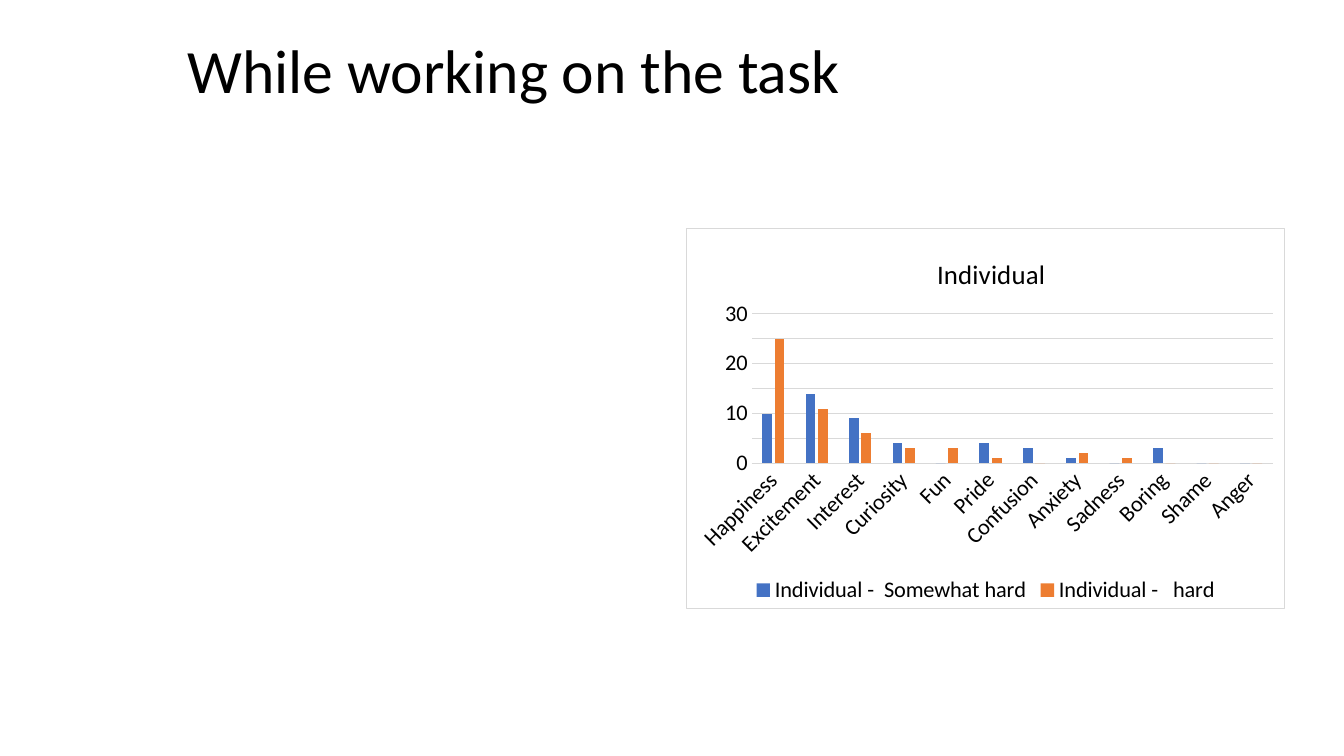
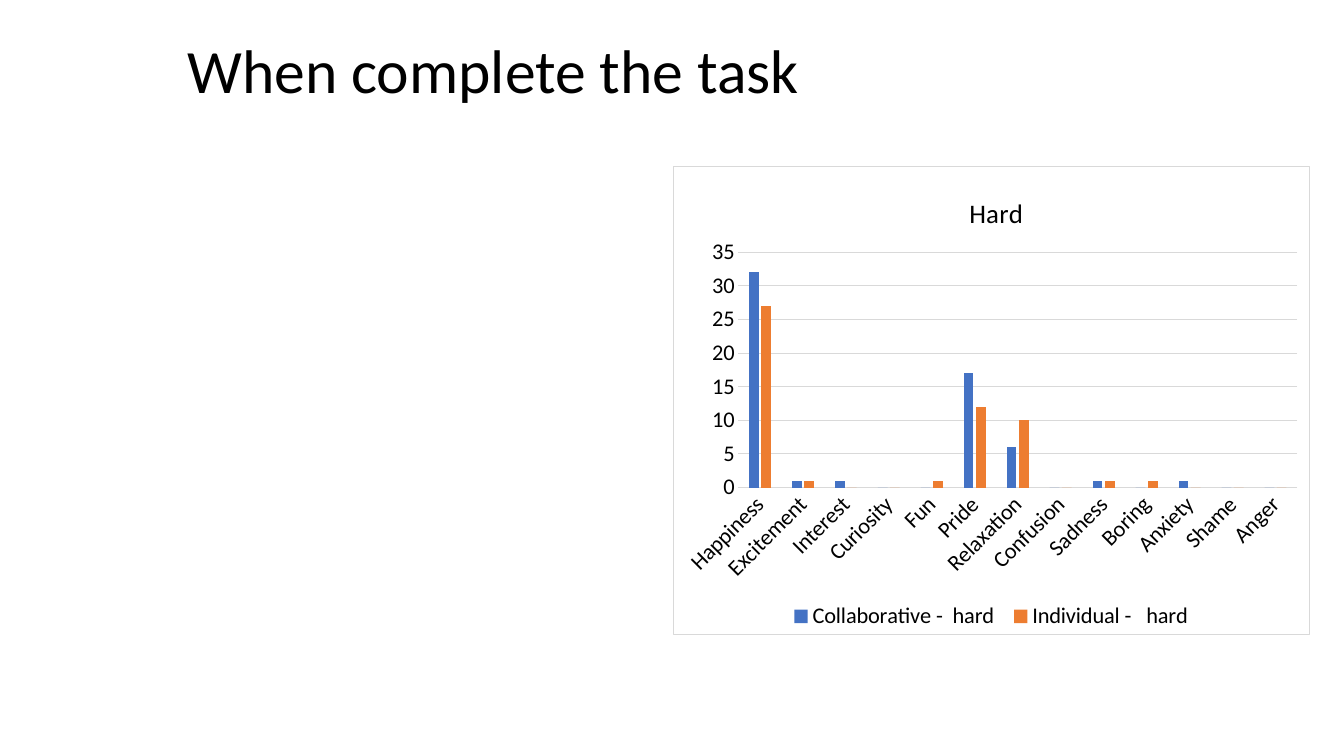
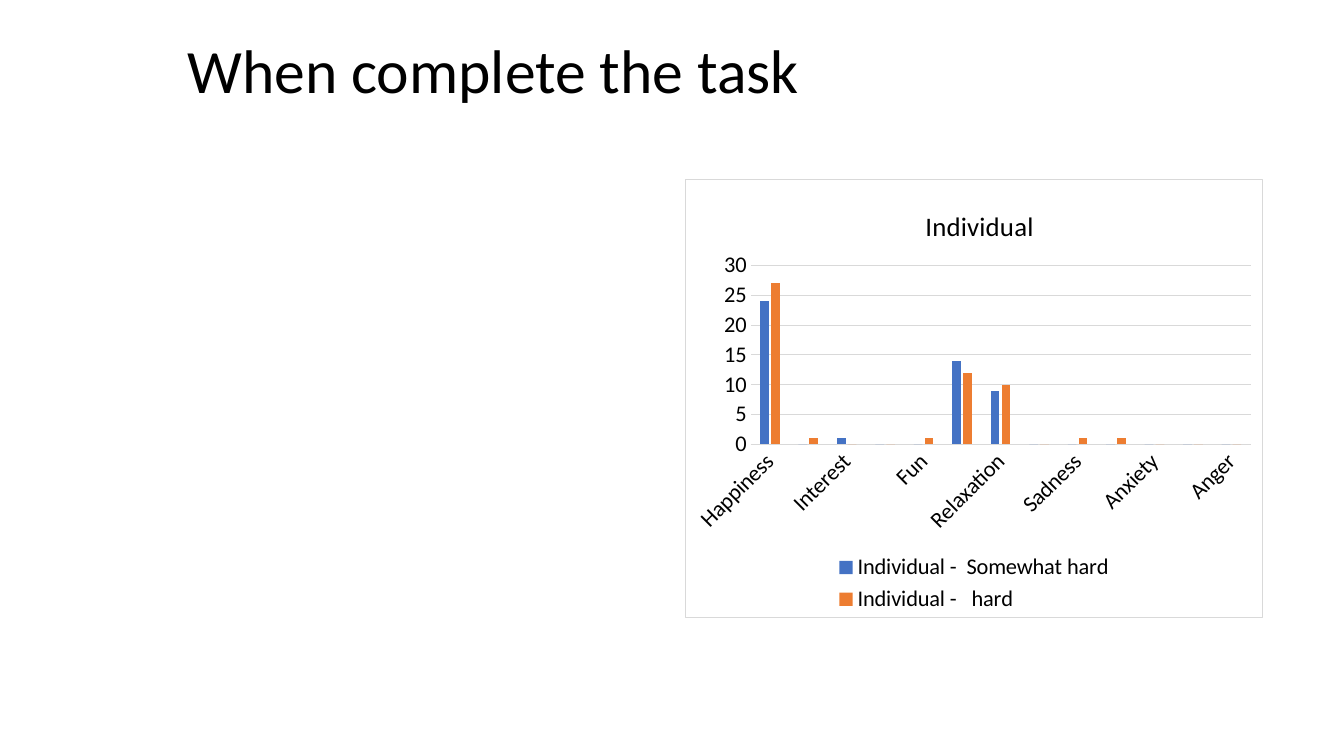
from lxml import etree
from pptx import Presentation
from pptx.chart.data import CategoryChartData
from pptx.dml.color import RGBColor
from pptx.enum import chart as ch, text
from pptx.oxml import parse_xml
from pptx.oxml.ns import nsdecls, qn
from pptx.util import Inches, Pt

BLACK = RGBColor(0x00, 0x00, 0x00)
GRID = RGBColor(0xD9, 0xD9, 0xD9)
BLUE = RGBColor(0x44, 0x72, 0xC4)
ORANGE = RGBColor(0xED, 0x7D, 0x31)
FONT = "Calibri"

# Distances in inches from the chart frame
PLOT_LEFT, PLOT_TOP, PLOT_RIGHT = 0.65, 0.85, 0.12
TITLE_TOP = 0.22

WORKING_EMOTIONS = ["Happiness", "Excitement", "Interest", "Curiosity", "Fun", "Pride",
                    "Confusion", "Anxiety", "Sadness", "Boring", "Shame", "Anger"]
COMPLETE_EMOTIONS = ["Happiness", "Excitement", "Interest", "Curiosity", "Fun", "Pride",
                     "Relaxation", "Confusion", "Sadness", "Boring", "Anxiety", "Shame",
                     "Anger"]
SOMEWHAT_HARD = "Individual -  Somewhat hard"
HARD = "Individual -   hard"
COLLABORATIVE_HARD = "Collaborative -  hard "
COMPLETE_HARD_VALUES = [27, 1, 0, 0, 1, 12, 10, 0, 1, 1, 0, 0, 0]


def set_font(font, size):
    font.name = FONT
    font.size = Pt(size)
    font.color.rgb = BLACK


def set_line(line):
    line.color.rgb = GRID
    line.width = Pt(0.75)


def add_title_slide(prs, title):
    s = prs.slides.add_slide(prs.slide_layouts[6])
    tf = s.shapes.add_textbox(Inches(1.76), 0, Inches(11.5), Inches(1.45)).text_frame
    tf.word_wrap = True
    tf.vertical_anchor = text.MSO_ANCHOR.MIDDLE
    p = tf.paragraphs[0]
    p.text = title
    p.line_spacing = 0.9
    set_font(p.runs[0].font, 44)
    return s


def set_layout(parent, index, **values):
    """Place a chart part by hand; values are fractions of the chart."""
    for old in parent.findall(qn("c:layout")):
        parent.remove(old)
    layout = parse_xml(f"<c:layout {nsdecls('c')}><c:manualLayout/></c:layout>")
    for tag, value in values.items():
        val = value if isinstance(value, str) else f"{value:.4f}"
        etree.SubElement(layout[0], qn(f"c:{tag}")).set("val", val)
    parent.insert(index, layout)


def set_frame(chart):
    """Give the chart area a white fill and a thin border."""
    chart._chartSpace.find(qn("c:chart")).addnext(parse_xml(
        f'<c:spPr {nsdecls("c", "a")}>'
        '<a:solidFill><a:srgbClr val="FFFFFF"/></a:solidFill>'
        f'<a:ln w="{Pt(0.75)}"><a:solidFill><a:srgbClr val="{GRID}"/></a:solidFill></a:ln>'
        '</c:spPr>'))


def style_axes(chart, maximum):
    cat, val = chart.category_axis, chart.value_axis
    for axis in (cat, val):
        axis.major_tick_mark = axis.minor_tick_mark = ch.XL_TICK_MARK.NONE
        set_font(axis.tick_labels.font, 16)
    set_line(cat.format.line)
    # Automatic rotation of the category labels
    cat._element.find(qn("c:txPr")).find(qn("a:bodyPr")).set("rot", "-60000000")
    val.format.line.fill.background()
    val.has_major_gridlines = True
    set_line(val.major_gridlines.format.line)
    val.minimum_scale, val.maximum_scale, val.major_unit = 0, maximum, 5


def add_emotion_chart(s, box, title, title_width, emotions, series, maximum, plot_bottom):
    data = CategoryChartData()
    data.categories = emotions
    for name, values in series:
        data.add_series(name, values)
    chart = s.shapes.add_chart(ch.XL_CHART_TYPE.COLUMN_CLUSTERED,
                               *map(Inches, box), data).chart
    set_font(chart.font, 16)
    set_frame(chart)

    plot = chart.plots[0]
    plot.vary_by_categories = False
    plot.gap_width, plot.overlap = 219, -27
    for ser, color in zip(plot.series, (BLUE, ORANGE)):
        ser.format.fill.solid()
        ser.format.fill.fore_color.rgb = color

    chart.has_title = True
    p = chart.chart_title.text_frame.paragraphs[0]
    p.text = title
    set_font(p.runs[0].font, 19.2)
    p.runs[0].font.bold = False

    chart.has_legend = True
    chart.legend.position = ch.XL_LEGEND_POSITION.BOTTOM
    chart.legend.include_in_layout = False
    set_font(chart.legend.font, 16)
    style_axes(chart, maximum)

    width, height = box[2:]
    set_layout(chart.chart_title._element, 1, xMode="edge", yMode="edge",
               x=(width - title_width) / 2 / width, y=TITLE_TOP / height)
    set_layout(chart._chartSpace.find(qn("c:chart")).find(qn("c:plotArea")), 0,
               layoutTarget="inner", xMode="edge", yMode="edge",
               x=PLOT_LEFT / width, y=PLOT_TOP / height,
               w=(width - PLOT_LEFT - PLOT_RIGHT) / width,
               h=(height - PLOT_TOP - plot_bottom) / height)


def main():
    prs = Presentation()
    prs.slide_width, prs.slide_height = Inches(13.33), Inches(7.5)

    s = add_title_slide(prs, "While working on the task")
    add_emotion_chart(s, (6.8, 2.26, 5.95, 3.78), "Individual", 1.06, WORKING_EMOTIONS, [
        (SOMEWHAT_HARD, [10, 14, 9, 4, 0, 4, 3, 1, 0, 3, 0, 0]),
        (HARD, [25, 11, 6, 3, 3, 1, 0, 2, 1, 0, 0, 0]),
    ], maximum=30, plot_bottom=1.44)

    s = add_title_slide(prs, "When complete the task")
    add_emotion_chart(s, (6.67, 1.65, 6.32, 4.65), "Hard", 0.53, COMPLETE_EMOTIONS, [
        (COLLABORATIVE_HARD, [32, 1, 1, 0, 0, 17, 6, 0, 1, 0, 1, 0, 0]),
        (HARD, COMPLETE_HARD_VALUES),
    ], maximum=35, plot_bottom=1.46)

    s = add_title_slide(prs, "When complete the task")
    add_emotion_chart(s, (6.79, 1.78, 5.74, 4.35), "Individual", 1.06, COMPLETE_EMOTIONS, [
        (SOMEWHAT_HARD, [24, 0, 1, 0, 0, 14, 9, 0, 0, 0, 0, 0, 0]),
        (HARD, COMPLETE_HARD_VALUES),
    ], maximum=30, plot_bottom=1.72)

    prs.save("out.pptx")


if __name__ == "__main__":
    main()
